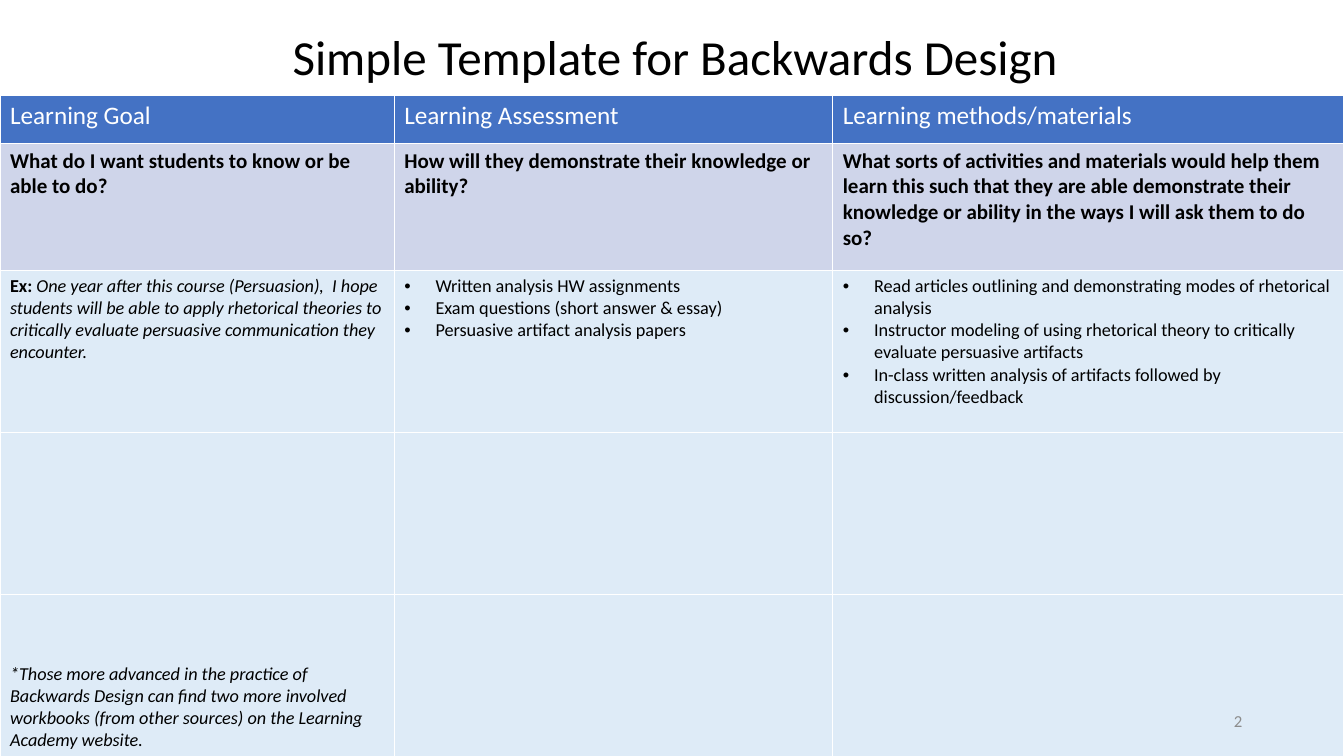
from pptx import Presentation
from pptx.dml.color import RGBColor
from pptx.enum.text import MSO_ANCHOR as Anchor, MSO_AUTO_SIZE as AutoSize, PP_ALIGN as Align
from pptx.oxml.ns import qn
from pptx.util import Inches, Pt
from lxml.etree import SubElement

FONT = "Calibri"
BLACK, WHITE, GREY = "000000", "FFFFFF", "8C8C8C"
HEADER_FILL, QUESTION_FILL, BODY_FILL = "4472C4", "CFD5EA", "DEEBF7"

COLUMN_WIDTHS = [3.91, 4.35, 5.07]
ROW_HEIGHTS = [0.47, 1.26, 1.61, 1.61, 1.61]
# Per row: fill, text colour, size, bold
ROW_STYLES = [(HEADER_FILL, WHITE, 18, False), (QUESTION_FILL, BLACK, 15, True)]
ROW_STYLES += [(BODY_FILL, BLACK, 13, False)] * 3

HEADINGS = ["Learning Goal", "Learning Assessment", "Learning methods/materials"]
QUESTIONS = [
    "What do I want students to know or be able to do?",
    "How will they demonstrate their knowledge or ability?",
    "What sorts of activities and materials would help them learn this such that they are "
    "able demonstrate their knowledge or ability in the ways I will ask them to do so?",
]
EXAMPLE_LABEL = "Ex: "
EXAMPLE_GOAL = (
    "One year after this course (Persuasion),  I hope students will be able to apply "
    "rhetorical theories to critically evaluate persuasive communication they encounter."
)
ASSESSMENTS = [
    "Written analysis HW assignments",
    "Exam questions (short answer & essay)",
    "Persuasive artifact analysis papers",
]
METHODS = [
    "Read articles outlining and demonstrating modes of rhetorical analysis",
    "Instructor modeling of using rhetorical theory to critically evaluate persuasive artifacts",
    "In-class written analysis of artifacts followed by discussion/feedback",
]
FOOTNOTE = (
    "*Those more advanced in the practice of Backwards Design can find two more involved "
    "workbooks (from other sources) on the Learning Academy website."
)


def color(value):
    return RGBColor.from_string(value)


def add_span(para, text, size, text_color, bold=False, italic=False):
    span = para.add_run()
    span.text = text
    font = span.font
    font.name, font.size, font.bold, font.italic = FONT, Pt(size), bold, italic
    font.color.rgb = color(text_color)


def add_border(cell):
    properties = cell._tc.get_or_add_tcPr()
    for side in ("a:lnL", "a:lnR", "a:lnT", "a:lnB"):
        line = SubElement(properties, qn(side), w=str(Pt(1)))
        fill = SubElement(line, qn("a:solidFill"))
        SubElement(fill, qn("a:srgbClr"), val=WHITE)


def fill_bullets(cell, items, size):
    frame = cell.text_frame
    for index, item in enumerate(items):
        para = frame.add_paragraph() if index else frame.paragraphs[0]
        properties = para._p.get_or_add_pPr()
        properties.set("marL", str(Inches(0.31)))
        properties.set("indent", str(-Inches(0.31)))
        SubElement(properties, qn("a:buFont"), typeface="Arial")
        SubElement(properties, qn("a:buChar"), char="•")
        add_span(para, item, size, BLACK)


def add_title(slide, left, top, width, height):
    title = slide.shapes.title
    title.left, title.top, title.width, title.height = map(Inches, (left, top, width, height))
    frame = title.text_frame
    frame.auto_size = AutoSize.NONE
    frame.vertical_anchor = Anchor.TOP
    para = frame.paragraphs[0]
    para.alignment = Align.CENTER
    add_span(para, "Simple Template for Backwards Design", 35, BLACK)


def add_design_table(slide, left, top):
    box = map(Inches, (left, top, sum(COLUMN_WIDTHS), sum(ROW_HEIGHTS)))
    table = slide.shapes.add_table(len(ROW_HEIGHTS), len(COLUMN_WIDTHS), *box).table
    table.horz_banding = False
    for column, width in zip(table.columns, COLUMN_WIDTHS):
        column.width = Inches(width)

    # Row heights, borders and fills
    for row, height, (fill, *_) in zip(table.rows, ROW_HEIGHTS, ROW_STYLES):
        row.height = Inches(height)
        for cell in row.cells:
            add_border(cell)
            cell.fill.solid()
            cell.fill.fore_color.rgb = color(fill)

    # Headings and guiding questions
    for row, texts, style in zip(table.rows, (HEADINGS, QUESTIONS), ROW_STYLES):
        _, text_color, size, bold = style
        for cell, text in zip(row.cells, texts):
            add_span(cell.text_frame.paragraphs[0], text, size, text_color, bold)

    # Worked example
    size = ROW_STYLES[2][2]
    goal = table.cell(2, 0).text_frame.paragraphs[0]
    add_span(goal, EXAMPLE_LABEL, size, BLACK, bold=True)
    add_span(goal, EXAMPLE_GOAL, size, BLACK, italic=True)
    fill_bullets(table.cell(2, 1), ASSESSMENTS, size)
    fill_bullets(table.cell(2, 2), METHODS, size)

    # Footnote at the foot of the last row
    note = table.cell(4, 0)
    note.vertical_anchor = Anchor.BOTTOM
    add_span(note.text_frame.paragraphs[0], FOOTNOTE, size, BLACK, italic=True)


def add_page_number(slide, left, top, width, height):
    box = slide.shapes.add_textbox(*map(Inches, (left, top, width, height)))
    frame = box.text_frame
    frame.word_wrap = True
    frame.vertical_anchor = Anchor.MIDDLE
    para = frame.paragraphs[0]
    para.alignment = Align.RIGHT
    add_span(para, "2", 12, GREY)


def main():
    deck = Presentation()
    deck.slide_width, deck.slide_height = Inches(13.33), Inches(7.5)
    slide = deck.slides.add_slide(deck.slide_layouts[5])
    add_design_table(slide, 0, 0.95)
    add_title(slide, 2.71, 0.21, 7.98, 0.69)
    add_page_number(slide, 9.42, 6.95, 3, 0.4)
    deck.save("out.pptx")


if __name__ == "__main__":
    main()
